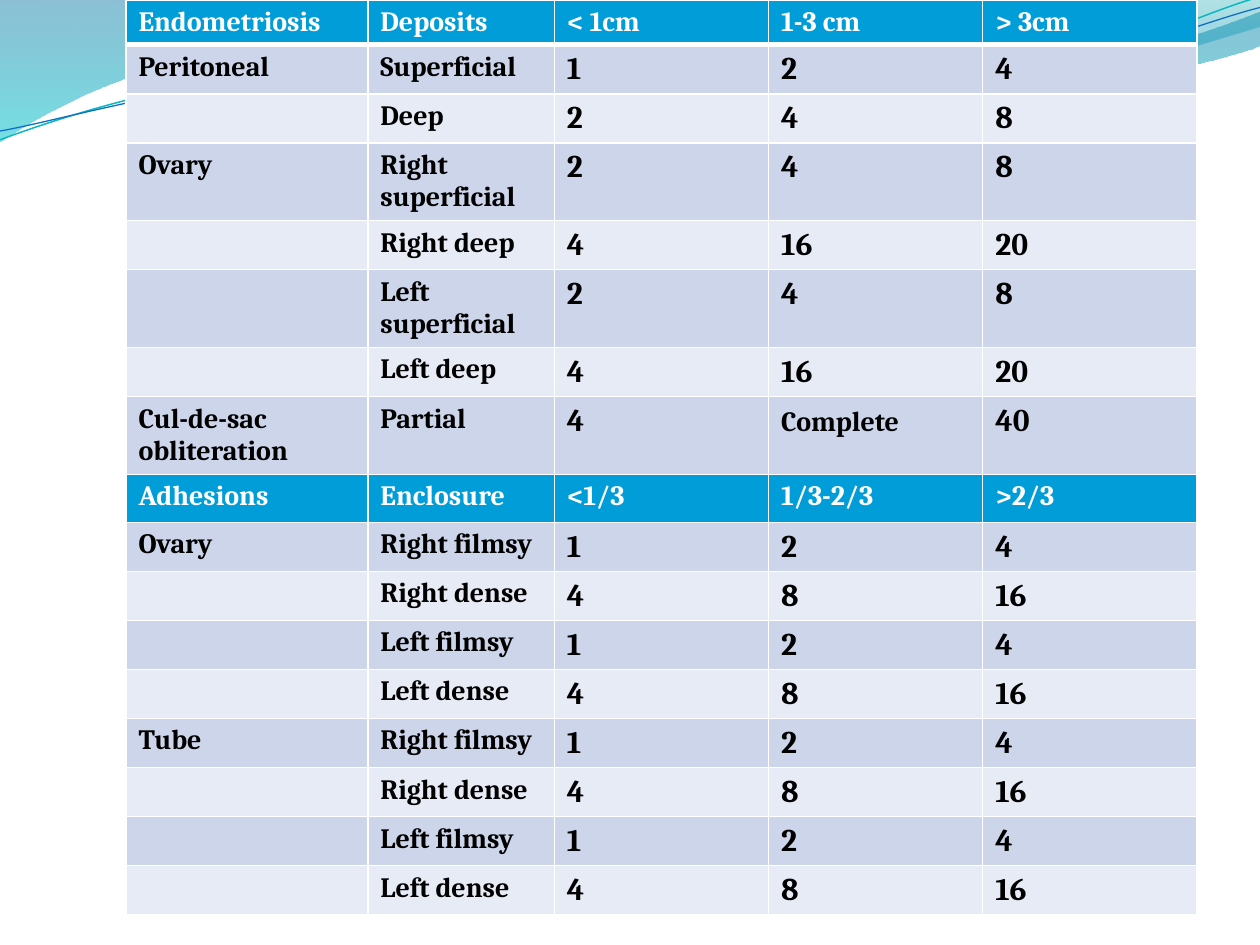
from dataclasses import dataclass
from math import cos, radians, sin

from lxml import etree
from pptx import Presentation
from pptx.dml.color import RGBColor
from pptx.oxml.ns import qn
from pptx.util import Inches, Pt

# Row heights in points, column widths in inches
HEAD, ROW, MID, TALL = 25.4, 28, 27.5, 44.5
COLS = [1.92, 1.48, 1.7, 1.7, 1.7]
LEFT, TOP = 1, 0
UNIT = 1000  # pen units to the inch
TILT = 357.3


@dataclass(frozen=True)
class Theme:
    font: str = "Cambria"
    label: int = 16
    score: int = 18
    head: str = "009DD9"
    odd: str = "CCD5EA"
    even: str = "E7EBF5"
    ink: str = "000000"
    white: str = "FFFFFF"


THEME = Theme()

SPREAD = [
    ("Endometriosis", "Deposits", "< 1cm", "1-3 cm", "> 3cm"),
    ("Peritoneal", "Superficial", "1", "2", "4"),
    ("", "Deep", "2", "4", "8"),
    ("Ovary", "Right superficial", "2", "4", "8"),
    ("", "Right deep", "4", "16", "20"),
    ("", "Left superficial", "2", "4", "8"),
    ("", "Left deep", "4", "16", "20"),
    ("Cul-de-sac obliteration", "Partial", "4", "Complete", "40"),
]
GRADES = [("filmsy", ("1", "2", "4")), ("dense", ("4", "8", "16"))]
ADHESIONS = [("Adhesions", "Enclosure", "<1/3", "1/3-2/3", ">2/3")] + [
    (organ if (side, grade) == ("Right", "filmsy") else "", f"{side} {grade}", *scores)
    for organ in ("Ovary", "Tube")
    for side in ("Right", "Left")
    for grade, scores in GRADES
]
ROWS = SPREAD + ADHESIONS
HEADS = (0, len(SPREAD))

# Each outline is a list of steps: one point is a line, three are a curve.
# Gradient stops are place, colour and opacity in percent.
BANDS = [
    ([[(0, 0)], [(4.4, -0.01)],
      [(4.76, 0.17), (6.64, 0.63), (7.58, 0.63)],
      [(8.53, 0.63), (9.58, 0.26), (10, 0.09)],
      [(10.01, 0.36)],
      [(9.83, 0.44), (8.7, 0.76), (7.46, 0.75)],
      [(6.22, 0.75), (3.82, 0.28), (2.57, 0.34)],
      [(1.29, 0.36), (0.46, 0.83), (-0.01, 1.13)],
      [(0, 0)]],
     [(0, "0074A1", 45), (1, "00C6CF", 55)]),
    ([[(4.79, -0.01)],
      [(5.09, 0.11), (6.82, 0.62), (7.69, 0.65)],
      [(8.56, 0.69), (9.61, 0.32), (10, 0.21)],
      [(10, 0)], [(4.79, -0.01)]],
     [(0, "00A1A9", 30), (0.8, "008BBF", 45)]),
]
# Outline, middle of the turn, colour, width
WAVES = [
    ([[(0, 1.11)],
      [(0.48, 0.93), (1.58, 0.57), (2.77, 0.52)],
      [(3.95, 0.47), (5.93, 0.89), (7.13, 0.8)],
      [(8.33, 0.71), (9.38, 0.15), (9.98, -0.02)]], (4.99, 0.58), "0AB8BF", 0.85),
    ([[(0, 1.04)],
      [(0.47, 0.96), (1.64, 0.61), (2.83, 0.56)],
      [(4.03, 0.51), (5.97, 0.84), (7.17, 0.75)],
      [(8.36, 0.67), (9.41, 0.21), (10, 0.06)]], (5, 0.59), "0F6FC6", 0.75),
]


def rgb(code):
    return RGBColor.from_string(code)


def draw(slide, steps, close):
    """Draw an outline, joining each three-point step into one curve."""
    points = [(x * UNIT, y * UNIT) for step in steps for x, y in step]
    pen = slide.shapes.build_freeform(*points[0], scale=Inches(1) / UNIT)
    pen.add_line_segments(points[1:], close=close)
    shape = pen.convert_to_shape()
    shape.shadow.inherit = False
    lines = iter(list(shape._element.spPr.iter(qn("a:lnTo"))))
    for step in steps[1:]:
        nodes = [next(lines) for _ in step]
        if len(nodes) == 3:
            curve = etree.Element(qn("a:cubicBezTo"))
            nodes[0].addprevious(curve)
            for node in nodes:
                curve.append(node[0])
                node.getparent().remove(node)
    return shape


def add_band(slide, steps, stops):
    shape = draw(slide, steps, True)
    shape.line.fill.background()
    shape.fill.gradient()
    shape.fill.gradient_angle = 270
    for stop, (place, code, _) in zip(shape.fill.gradient_stops, stops):
        stop.position = place
        stop.color.rgb = rgb(code)
    nodes = shape._element.spPr.iter(qn("a:srgbClr"))
    for node, (_, _, alpha) in zip(nodes, stops):
        etree.SubElement(node, qn("a:alpha"), val=str(alpha * 1000))


def turn(point, mid, angle):
    x, y = point[0] - mid[0], point[1] - mid[1]
    c, s = cos(radians(angle)), sin(radians(angle))
    return mid[0] + x * c - y * s, mid[1] + x * s + y * c


def add_wave(slide, steps, mid, code, width):
    level = [[turn(point, mid, -TILT) for point in step] for step in steps]
    shape = draw(slide, level, False)
    shape.rotation = TILT
    shape.fill.background()
    shape.line.color.rgb = rgb(code)
    shape.line.width = Pt(width)


def edge(cell, side, width):
    line = etree.SubElement(cell._tc.get_or_add_tcPr(), qn(f"a:ln{side}"),
                            w=str(Pt(width)))
    fill = etree.SubElement(line, qn("a:solidFill"))
    etree.SubElement(fill, qn("a:srgbClr"), val=THEME.white)


def add_run(para, text, size, code):
    run = para.add_run()
    run.text = text
    run.font.name = THEME.font
    run.font.size = Pt(size)
    run.font.bold = True
    run.font.color.rgb = rgb(code)


def fill_cell(cell, text, row, col):
    head = row in HEADS
    for side in "LRTB":
        edge(cell, side, 3 if (row, side) == (0, "B") else 1)
    cell.fill.solid()
    back = THEME.head if head else THEME.odd if row % 2 else THEME.even
    cell.fill.fore_color.rgb = rgb(back)
    para = cell.text_frame.paragraphs[0]
    if not text:
        etree.SubElement(para._p, qn("a:endParaRPr"), sz=str(THEME.label * 100))
        return
    score = text.isdigit()
    add_run(para, text, THEME.score if score else THEME.label,
            THEME.white if head else THEME.ink)
    if col > 1 and not head and not score:
        add_run(para, " ", THEME.score, THEME.ink)


def row_height(row, cells):
    if row in HEADS:
        return MID if row else HEAD
    wraps = any(text.endswith((" superficial", " obliteration")) for text in cells)
    return TALL if wraps else ROW


def add_scores(slide):
    heights = [row_height(r, cells) for r, cells in enumerate(ROWS)]
    table = slide.shapes.add_table(
        len(ROWS), len(COLS), Inches(LEFT), Inches(TOP),
        Inches(sum(COLS)), Pt(sum(heights))).table
    for column, width in zip(table.columns, COLS):
        column.width = Inches(width)
    for r, (cells, height) in enumerate(zip(ROWS, heights)):
        table.rows[r].height = Pt(height)
        for c, text in enumerate(cells):
            fill_cell(table.cell(r, c), text, r, c)


def main():
    deck = Presentation()
    deck.slide_width, deck.slide_height = Inches(10), Inches(7.5)
    slide = deck.slides.add_slide(deck.slide_layouts[6])
    for band in BANDS:
        add_band(slide, *band)
    for wave in WAVES:
        add_wave(slide, *wave)
    add_scores(slide)
    deck.save("out.pptx")


if __name__ == "__main__":
    main()
